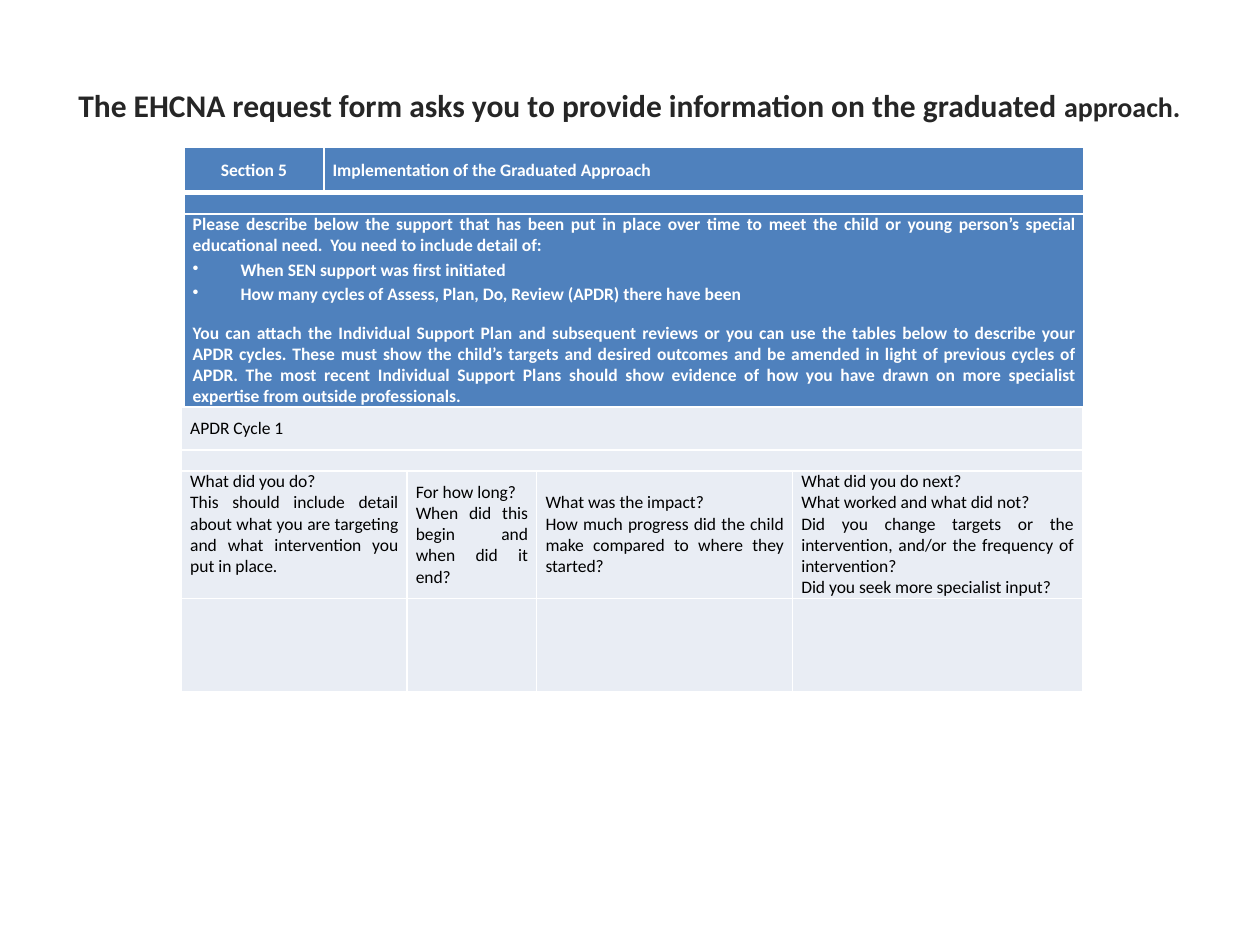
from dataclasses import dataclass

from lxml import etree
from pptx import Presentation
from pptx.dml.color import RGBColor
from pptx.enum.text import MSO_ANCHOR, PP_ALIGN
from pptx.oxml.ns import qn
from pptx.util import Inches, Pt

LEFT, CENTER, JUSTIFY = PP_ALIGN.LEFT, PP_ALIGN.CENTER, PP_ALIGN.JUSTIFY
TOP, MIDDLE = MSO_ANCHOR.TOP, MSO_ANCHOR.MIDDLE


@dataclass(frozen=True)
class Theme:
    font: str = "Calibri"
    title: str = "262626"
    header: str = "4F81BD"
    body: str = "E9EDF4"
    white: str = "FFFFFF"
    black: str = "000000"
    title_size: int = 18
    title_end_size: int = 16
    table_size: int = 10


THEME = Theme()


def write(para, text, size=THEME.table_size, color=THEME.black, bold=False,
          align=JUSTIFY, bullet=False, after=0):
    """Add a formatted span of text to a paragraph."""
    para.alignment = align
    para.space_after = Pt(after)
    if bullet:
        para.line_spacing = 1.15
        props = para._p.get_or_add_pPr()
        props.set("marL", str(Inches(0.38)))
        props.set("indent", str(-Inches(0.38)))
        etree.SubElement(props, qn("a:buChar"), char="•")
    span = para.add_run()
    span.text = text
    span.font.name = THEME.font
    span.font.size = Pt(size)
    span.font.bold = bold
    span.font.color.rgb = RGBColor.from_string(color)


def add_grid(page, left, top, columns, rows, fill, merged_rows, thick_row=None):
    """Add a filled table with white rules; thick_row has a heavier bottom rule."""
    table = page.shapes.add_table(
        len(rows), len(columns), Inches(left), Inches(top),
        Inches(sum(columns)), Inches(sum(rows))).table
    table.first_row = table.horz_banding = False
    for column, width in zip(table.columns, columns):
        column.width = Inches(width)
    for row_index, (row, height) in enumerate(zip(table.rows, rows)):
        row.height = Inches(height)
        for cell in row.cells:
            cell.vertical_anchor = MIDDLE
            cell.margin_left = cell.margin_right = Inches(0.07)
            cell.margin_top = cell.margin_bottom = 0
            for side in "LRTB":
                thick = (side == "B" and row_index == thick_row
                         or side == "T" and row_index - 1 == thick_row)
                rule = etree.SubElement(cell._tc.get_or_add_tcPr(), qn(f"a:ln{side}"),
                                        w=str(Pt(3 if thick else 1)))
                paint = etree.SubElement(rule, qn("a:solidFill"))
                etree.SubElement(paint, qn("a:srgbClr"), val=THEME.white)
            cell.fill.solid()
            cell.fill.fore_color.rgb = RGBColor.from_string(fill)
            # Keeps rows without text as low as one line of table text
            etree.SubElement(cell.text_frame.paragraphs[0]._p, qn("a:endParaRPr"),
                             sz=str(THEME.table_size * 100))
    for row_index in merged_rows:
        table.cell(row_index, 0).merge(table.cell(row_index, len(columns) - 1))
    return table


deck = Presentation()
deck.slide_width, deck.slide_height = Inches(10), Inches(7.5)
page = deck.slides.add_slide(deck.slide_layouts[6])

title_box = page.shapes.add_textbox(Inches(0.22), Inches(0.24), Inches(9.55), Inches(1.18))
title_box.text_frame.word_wrap = True
title_box.text_frame.vertical_anchor = MIDDLE
title = title_box.text_frame.paragraphs[0]
title_format = dict(color=THEME.title, bold=True, align=CENTER)
write(title, "The EHCNA request form asks you to provide information on the graduated ",
      size=THEME.title_size, **title_format)
write(title, "approach.", size=THEME.title_end_size, **title_format)

# Section heading and guidance
section = add_grid(page, 1.46, 1.17, [1.11, 6.03], [0.36, 0.16, 1.53],
                   THEME.header, merged_rows=[1, 2], thick_row=0)
header_format = dict(color=THEME.white, bold=True)
write(section.cell(0, 0).text_frame.paragraphs[0], "Section 5", align=CENTER, **header_format)
write(section.cell(0, 1).text_frame.paragraphs[0],
      "Implementation of the Graduated Approach", **header_format)

guidance = [
    ("Please describe below the support that has been put in place over time to meet the "
     "child or young person’s special educational need.  You need to include detail of:", {}),
    ("When SEN support was first initiated", dict(bullet=True)),
    ("How many cycles of Assess, Plan, Do, Review (APDR) there have been",
     dict(bullet=True, after=10)),
    ("You can attach the Individual Support Plan and subsequent reviews or you can use the "
     "tables below to describe your APDR cycles. These must show the child’s targets and "
     "desired outcomes and be amended in light of previous cycles of APDR. The most recent "
     "Individual Support Plans should show evidence of how you have drawn on more specialist "
     "expertise from outside professionals.", {}),
]
frame = section.cell(2, 0).text_frame
for index, (text, extra) in enumerate(guidance):
    para = frame.add_paragraph() if index else frame.paragraphs[0]
    write(para, text, **header_format, **extra)

# First cycle, with a blank row for answers
cycle = add_grid(page, 1.44, 3.23, [1.79, 1.03, 2.03, 2.3], [0.34, 0.17, 1.01, 0.74],
                 THEME.body, merged_rows=[0, 1])
write(cycle.cell(0, 0).text_frame.paragraphs[0], "APDR Cycle 1", align=LEFT)

questions = [
    ["What did you do?",
     "This should include detail about what you are targeting and what intervention you "
     "put in place."],
    ["For how long?", "When did this begin and when did it end?"],
    ["What was the impact?",
     "How much progress did the child make compared to where they started?"],
    ["What did you do next?", "What worked and what did not?",
     "Did you change targets or the intervention, and/or the frequency of intervention?",
     "Did you seek more specialist input?"],
]
for column, lines in enumerate(questions):
    frame = cycle.cell(2, column).text_frame
    for index, text in enumerate(lines):
        write(frame.add_paragraph() if index else frame.paragraphs[0], text)
cycle.cell(2, 0).vertical_anchor = TOP

deck.save("out.pptx")
